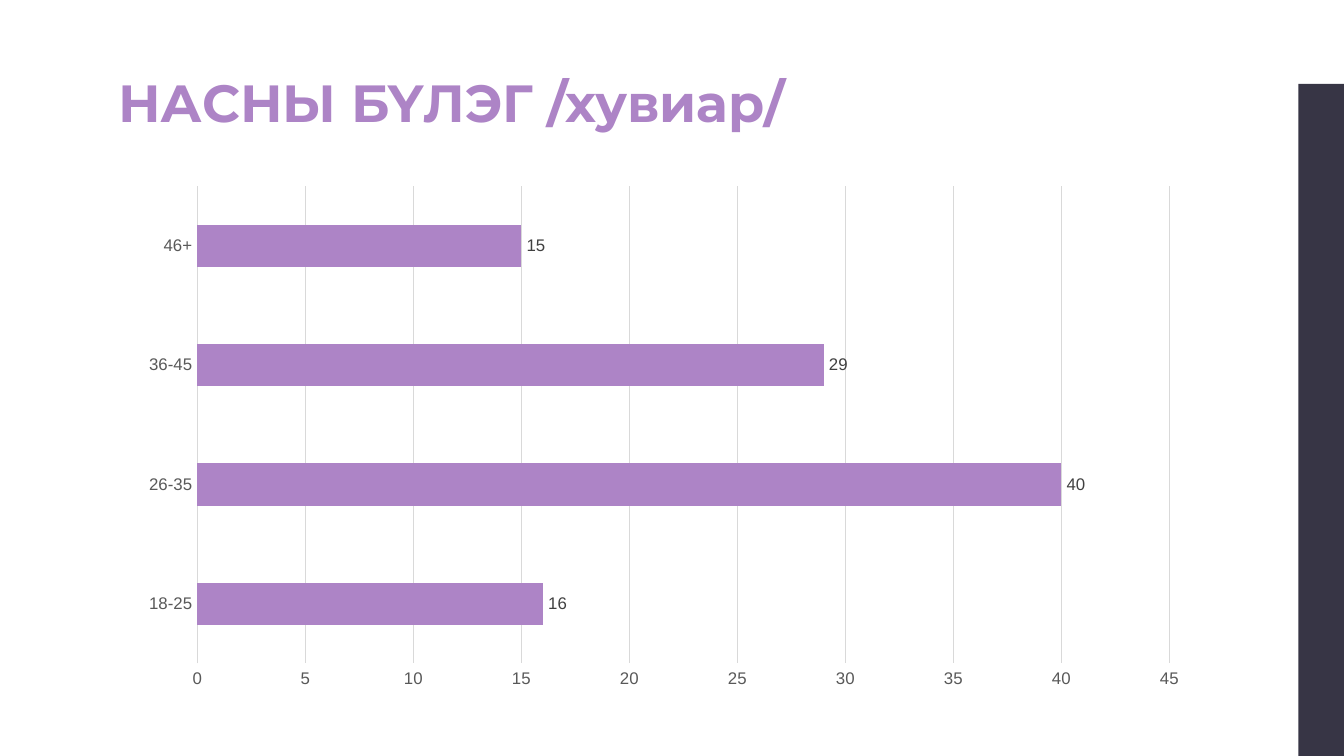
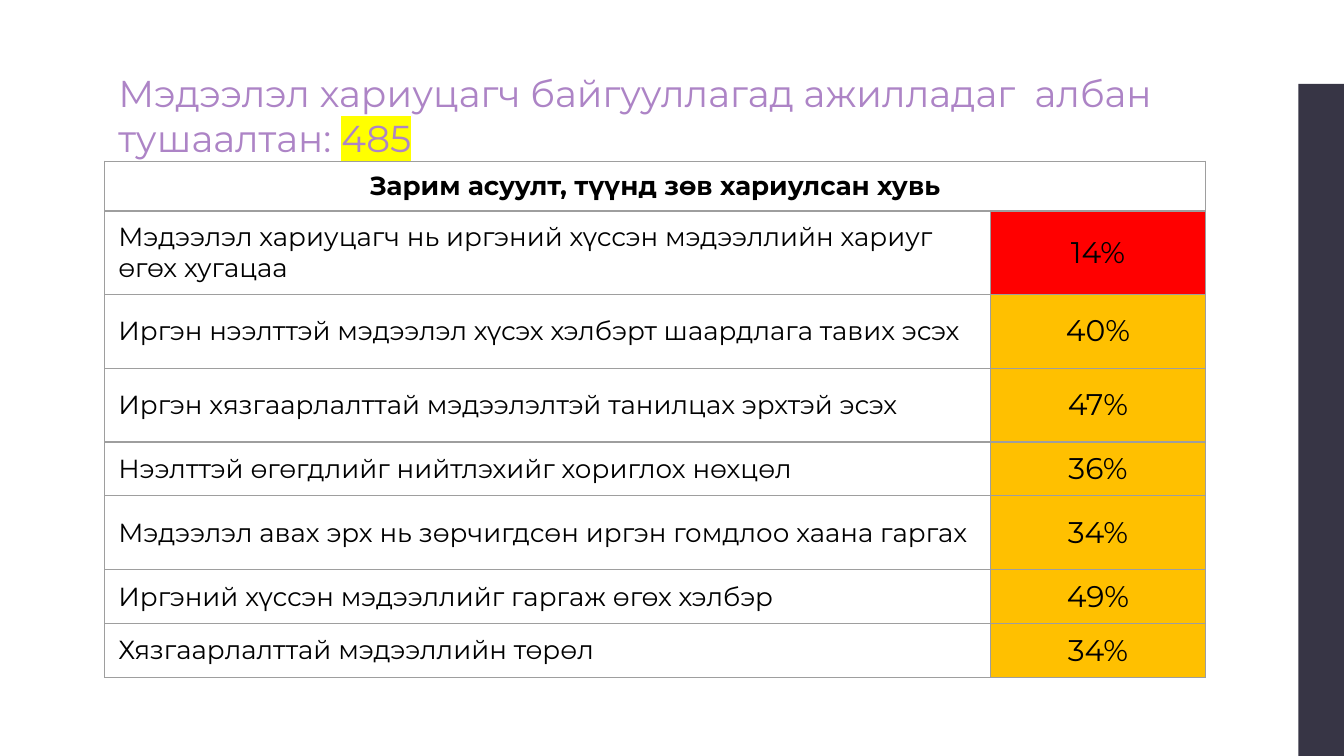
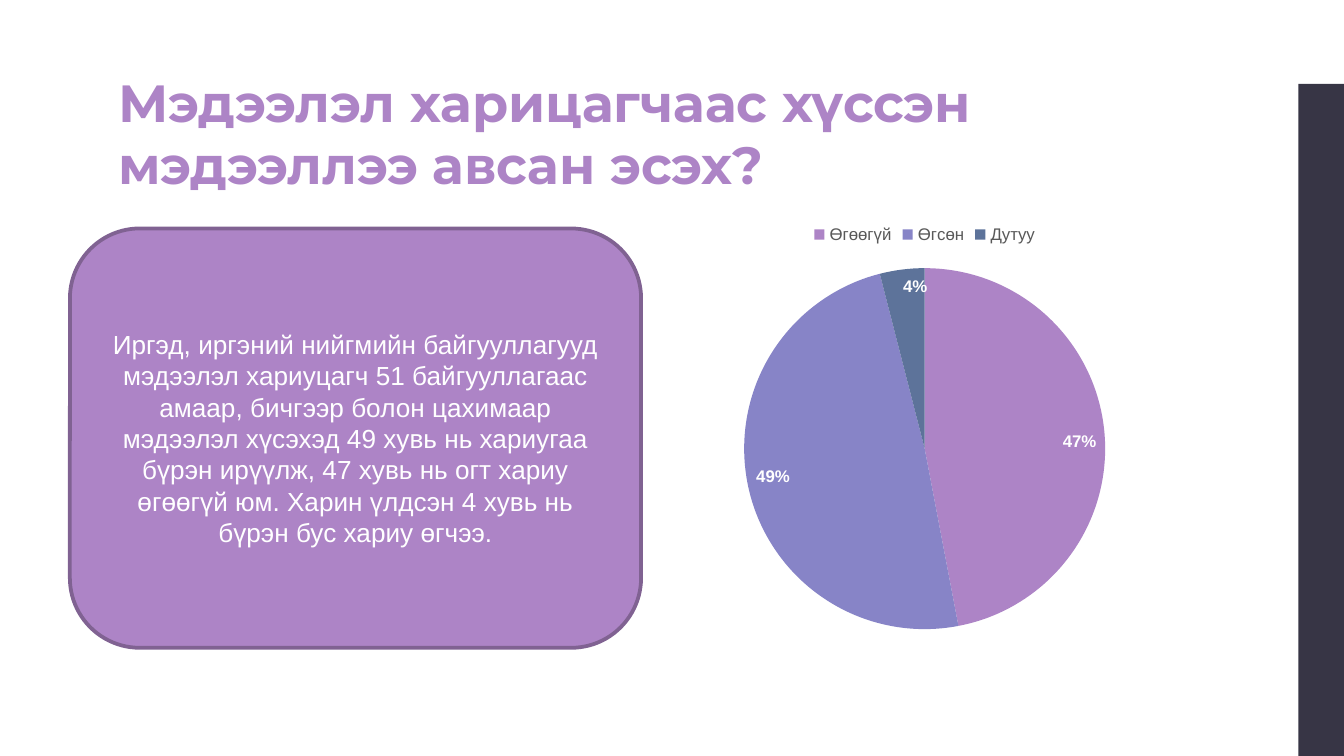
import dataclasses

import pptx
import pptx.chart.data
import pptx.dml.color
import pptx.enum.chart
import pptx.enum.shapes
import pptx.enum.text
import pptx.oxml
import pptx.oxml.ns
import pptx.util

EMU_PER_PX = 4572
ALIGN = pptx.enum.text.PP_ALIGN
ANCHOR = pptx.enum.text.MSO_ANCHOR
SHAPE = pptx.enum.shapes.MSO_SHAPE
CHART = pptx.enum.chart.XL_CHART_TYPE
LABEL = pptx.enum.chart.XL_LABEL_POSITION
LEGEND = pptx.enum.chart.XL_LEGEND_POSITION
TICK = pptx.enum.chart.XL_TICK_MARK


@dataclasses.dataclass(frozen=True)
class Theme:
    """Colours, typefaces and type sizes of the presentation."""

    purple: str = "AD84C6"
    periwinkle: str = "8784C7"
    slate: str = "5D739A"
    outline: str = "806292"
    band: str = "373545"
    black: str = "000000"
    white: str = "FFFFFF"
    highlight: str = "FFFF00"
    low: str = "FF0000"
    medium: str = "FFC000"
    border: str = "9E9E9E"
    grid: str = "D9D9D9"
    axis_text: str = "595959"
    label_text: str = "404040"
    heading_face: str = "Montserrat"
    body_face: str = "Arial"
    title_size: int = 28
    subtitle_size: int = 20
    body_size: int = 14
    percent_size: int = 16
    chart_size: int = 10
    small_size: int = 9
    hairline: float = 0.75


def px(*lengths):
    return [length * EMU_PER_PX for length in lengths]


def rgb(colour):
    return pptx.dml.color.RGBColor.from_string(colour)


def assign(target, **values):
    for name, value in values.items():
        setattr(target, name, value)


def paint(fill, colour):
    fill.solid()
    fill.fore_color.rgb = rgb(colour)


def draw_line(line, colour, width):
    paint(line.fill, colour)
    line.width = pptx.util.Pt(width)


def style_font(font, face, size, colour, bold=False):
    assign(font, name=face, size=pptx.util.Pt(size), bold=bold)
    paint(font.fill, colour)


class Deck:
    """Holds the theme and the current slide and draws each kind of element."""

    def __init__(self, theme):
        self.theme = theme
        self.presentation = pptx.Presentation()
        width, height = px(2000, 1125)
        assign(self.presentation, slide_width=width, slide_height=height)
        self.slide = None

    def add_slide(self):
        layout = self.presentation.slide_layouts[5]
        self.slide = self.presentation.slides.add_slide(layout)
        band = self.shape(SHAPE.RECTANGLE, (1466, 591, 1000, 68), self.theme.band)
        band.rotation = 90

    def shape(self, kind, box, colour, outline=None):
        shape = self.slide.shapes.add_shape(kind, *px(*box))
        shape.shadow.inherit = False
        paint(shape.fill, colour)
        if outline:
            draw_line(shape.line, outline, 2)
        else:
            shape.line.fill.background()
        return shape

    def add_text(self, paragraph, text, size, colour, align=ALIGN.LEFT, bold=False, face=None):
        paragraph.alignment = align
        run = paragraph.add_run()
        run.text = text
        style_font(run.font, face or self.theme.heading_face, size, colour, bold)
        return run

    def title(self, text, size, bold, highlighted=None):
        title = self.slide.shapes.title
        left, top, width, height = px(156, 84, 1686, 142)
        assign(title, left=left, top=top, width=width, height=height)
        frame = title.text_frame
        inset = px(20)[0]
        assign(frame, margin_left=inset, margin_right=inset, margin_top=inset,
               margin_bottom=inset, word_wrap=True, vertical_anchor=ANCHOR.TOP,
               auto_size=pptx.enum.text.MSO_AUTO_SIZE.NONE)
        paragraph = frame.paragraphs[0]
        self.add_text(paragraph, text, size, self.theme.purple, bold=bold)
        if highlighted:
            run = self.add_text(paragraph, highlighted, size, self.theme.purple, bold=bold)
            self.highlight(run)

    def highlight(self, run):
        fill = run.font._element.find(pptx.oxml.ns.qn("a:solidFill"))
        fill.addnext(pptx.oxml.parse_xml(
            f'<a:highlight {pptx.oxml.ns.nsdecls("a")}>'
            f'<a:srgbClr val="{self.theme.highlight}"/></a:highlight>'))

    def card(self, box, text):
        theme = self.theme
        card = self.shape(SHAPE.ROUNDED_RECTANGLE, box, theme.purple, theme.outline)
        assign(card.text_frame, word_wrap=True, vertical_anchor=ANCHOR.MIDDLE)
        self.add_text(card.text_frame.paragraphs[0], text, theme.body_size, theme.white,
                      ALIGN.CENTER, face=theme.body_face)

    def cell(self, cell, text, size, align=ALIGN.LEFT, bold=False, colour=None):
        cell.vertical_anchor = ANCHOR.MIDDLE
        self.add_text(cell.text_frame.paragraphs[0], text, size, self.theme.black, align, bold)
        if colour:
            paint(cell.fill, colour)

    def border(self, cell):
        properties = cell._tc.get_or_add_tcPr()
        width = pptx.util.Pt(self.theme.hairline)
        for position, side in enumerate(("lnL", "lnR", "lnT", "lnB")):
            properties.insert(position, pptx.oxml.parse_xml(
                f'<a:{side} {pptx.oxml.ns.nsdecls("a")} w="{width}"><a:solidFill>'
                f'<a:srgbClr val="{self.theme.border}"/></a:solidFill></a:{side}>'))

    def table(self, position, widths, heights, heading, answers):
        theme = self.theme
        table = self.slide.shapes.add_table(
            len(heights), len(widths), *px(*position, sum(widths), sum(heights))).table
        assign(table, first_row=False, horz_banding=False)
        for column, width in zip(table.columns, px(*widths)):
            column.width = width
        for row, height in zip(table.rows, px(*heights)):
            row.height = height
        for cell in table.iter_cells():
            cell.fill.background()
            self.border(cell)
        table.cell(0, 0).merge(table.cell(0, 1))
        self.cell(table.cell(0, 0), heading, theme.body_size, ALIGN.CENTER, True)
        for index, (question, percent) in enumerate(answers, start=1):
            colour = theme.low if percent < 30 else theme.medium
            self.cell(table.cell(index, 0), question, theme.body_size)
            self.cell(table.cell(index, 1), f"{percent}%", theme.percent_size,
                      ALIGN.CENTER, colour=colour)

    def chart(self, kind, box, values):
        data = pptx.chart.data.CategoryChartData()
        data.categories = list(values)
        data.add_series("Series 1", list(values.values()))
        chart = self.slide.shapes.add_chart(kind, *px(*box), data).chart
        assign(chart, has_title=False, has_legend=False)
        style_font(chart.font, self.theme.body_face, self.theme.chart_size, self.theme.black)
        return chart

    def labels(self, plot, colour, bold=False, **values):
        plot.has_data_labels = True
        assign(plot.data_labels, **values)
        style_font(plot.data_labels.font, self.theme.body_face, self.theme.small_size, colour, bold)

    def bar_chart(self, box, values):
        theme = self.theme
        chart = self.chart(CHART.BAR_CLUSTERED, box, values)
        plot = chart.plots[0]
        assign(plot, gap_width=182, vary_by_categories=False)
        paint(plot.series[0].format.fill, theme.purple)
        self.labels(plot, theme.label_text, show_value=True, position=LABEL.OUTSIDE_END)
        for axis in (chart.category_axis, chart.value_axis):
            assign(axis, major_tick_mark=TICK.NONE, minor_tick_mark=TICK.NONE)
            style_font(axis.tick_labels.font, theme.body_face, theme.small_size, theme.axis_text)
        draw_line(chart.category_axis.format.line, theme.grid, theme.hairline)
        chart.value_axis.format.line.fill.background()
        draw_line(chart.value_axis.major_gridlines.format.line, theme.grid, theme.hairline)

    def pie_chart(self, box, values, colours):
        theme = self.theme
        chart = self.chart(CHART.PIE, box, values)
        chart.has_legend = True
        assign(chart.legend, position=LEGEND.TOP, include_in_layout=False)
        style_font(chart.legend.font, theme.body_face, theme.small_size, theme.axis_text)
        plot = chart.plots[0]
        for index, colour in enumerate(colours):
            paint(plot.series[0].points[index].format.fill, colour)
        self.labels(plot, theme.white, bold=True, show_percentage=True, show_value=False,
                    number_format="0%", number_format_is_linked=False,
                    position=LABEL.INSIDE_END)


def age_slide(deck):
    deck.add_slide()
    deck.title("НАСНЫ БҮЛЭГ /хувиар/", deck.theme.title_size, True)
    deck.bar_chart((190, 262, 1596, 778), {"18-25": 16, "26-35": 40, "36-45": 29, "46+": 15})


def knowledge_slide(deck):
    deck.add_slide()
    deck.title("Мэдээлэл хариуцагч байгууллагад ажилладаг  албан тушаалтан: ",
               deck.theme.subtitle_size, False, highlighted="485")
    answers = [
        ("Мэдээлэл хариуцагч нь иргэний хүссэн мэдээллийн хариуг өгөх хугацаа", 14),
        ("Иргэн нээлттэй мэдээлэл хүсэх хэлбэрт шаардлага тавих эсэх", 40),
        ("Иргэн хязгаарлалттай мэдээлэлтэй танилцах эрхтэй эсэх", 47),
        ("Нээлттэй өгөгдлийг нийтлэхийг хориглох нөхцөл", 36),
        ("Мэдээлэл авах эрх нь зөрчигдсөн иргэн гомдлоо хаана гаргах", 34),
        ("Иргэний хүссэн мэдээллийг гаргаж өгөх хэлбэр", 49),
        ("Хязгаарлалттай мэдээллийн төрөл", 34),
    ]
    deck.table((156, 240), (1318, 320), (74, 124, 110, 110, 80, 110, 80, 80),
               "Зарим асуулт, түүнд зөв хариулсан хувь", answers)


def response_slide(deck):
    theme = deck.theme
    deck.add_slide()
    deck.title("Мэдээлэл харицагчаас хүссэн мэдээллээ авсан эсэх?", theme.title_size, True)
    deck.pie_chart((1024, 312, 704, 652), {"Өгөөгүй": 47, "Өгсөн": 49, "Дутуу": 4},
                   (theme.purple, theme.periwinkle, theme.slate))
    deck.card((104, 340, 850, 624),
              "Иргэд, иргэний нийгмийн байгууллагууд мэдээлэл хариуцагч 51 байгууллагаас "
              "амаар, бичгээр болон цахимаар мэдээлэл хүсэхэд 49 хувь нь хариугаа бүрэн "
              "ирүүлж, 47 хувь нь огт хариу өгөөгүй юм. Харин үлдсэн 4 хувь нь бүрэн бус "
              "хариу өгчээ.")


def main():
    deck = Deck(Theme())
    for build in (age_slide, knowledge_slide, response_slide):
        build(deck)
    deck.presentation.save("out.pptx")


if __name__ == "__main__":
    main()
